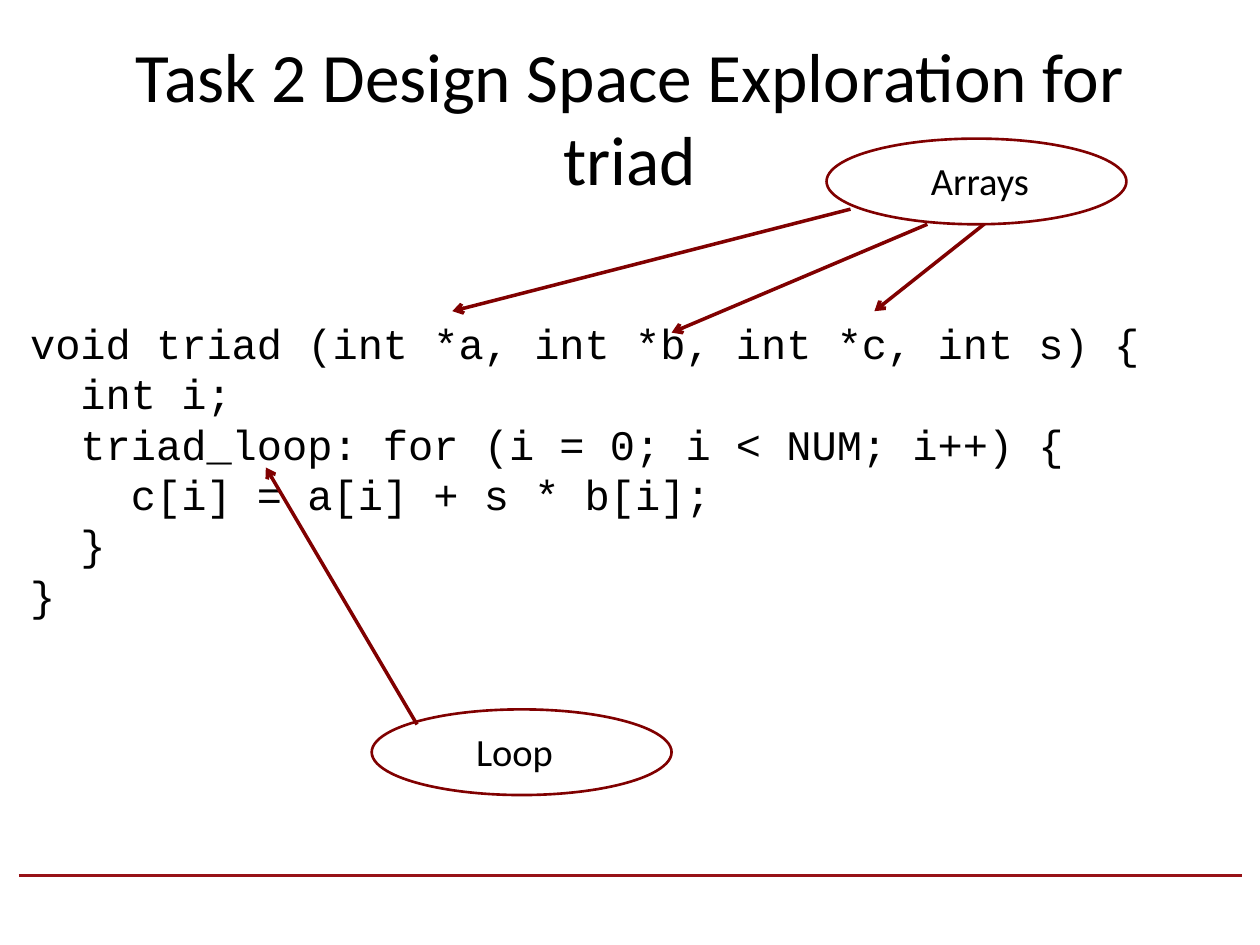
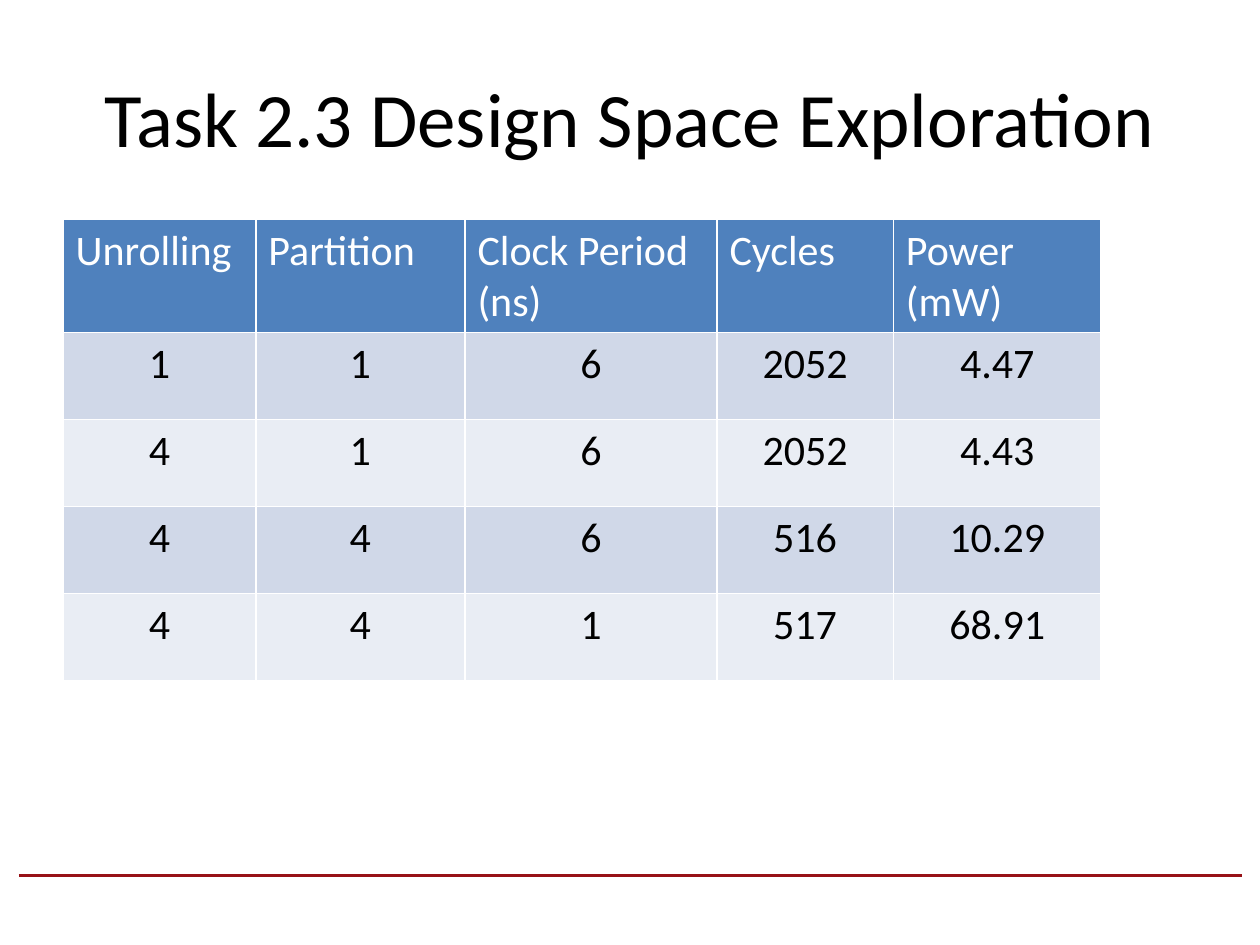
from lxml.etree import SubElement
from pptx import Presentation
from pptx.dml.color import RGBColor
from pptx.enum.shapes import MSO_CONNECTOR, MSO_SHAPE
from pptx.enum.text import MSO_ANCHOR, PP_ALIGN
from pptx.oxml.ns import qn
from pptx.util import Inches, Pt

BLACK = RGBColor(0x00, 0x00, 0x00)
WHITE = RGBColor(0xFF, 0xFF, 0xFF)
MAROON = RGBColor(0x80, 0x00, 0x00)
CRIMSON = RGBColor(0x97, 0x12, 0x17)
HEADER = RGBColor(0x4F, 0x81, 0xBD)
BANDS = (RGBColor(0xD0, 0xD8, 0xE8), RGBColor(0xE9, 0xED, 0xF4))

COLS, ROWS = 100, 75
UNIT = Inches(10) // COLS

TITLE = {"name": "Calibri", "size": Pt(44), "color": BLACK}
LABEL = {"name": "Calibri", "size": Pt(22), "color": BLACK}
CODE = {"name": "Courier New", "size": Pt(24), "color": BLACK}
HEAD = {"name": "Calibri", "size": Pt(24), "bold": False, "color": WHITE}
BODY = {**HEAD, "color": BLACK}

TRIAD = """void triad (int *a, int *b, int *c, int s) {
  int i;
  triad_loop: for (i = 0; i < NUM; i++) {
    c[i] = a[i] + s * b[i];
  }
}"""

RESULTS = [
    ("Unrolling", "Partition", "Clock Period (ns)", "Cycles", "Power (mW)"),
    ("1", "1", "6", "2052", "4.47"),
    ("4", "1", "6", "2052", "4.43"),
    ("4", "4", "6", "516", "10.29"),
    ("4", "4", "1", "517", "68.91"),
]
WIDTHS = (15.3, 16.6, 20, 14, 16.5)
HEIGHTS = (9,) + (6.9,) * 4


def grid(*cells):
    """Turn counts of grid cells into slide lengths."""
    return [round(cell * UNIT) for cell in cells]


def write(frame, text, style, align=PP_ALIGN.LEFT):
    """Fill a text frame, one paragraph for each line of text."""
    frame.text = text
    for para in frame.paragraphs:
        para.alignment = align
        for key, value in style.items():
            if key == "color":
                para.font.color.rgb = value
            else:
                setattr(para.font, key, value)


def add_text(slide, box, text, style, align=PP_ALIGN.LEFT,
             anchor=MSO_ANCHOR.TOP, wrap=True):
    frame = slide.shapes.add_textbox(*grid(*box)).text_frame
    frame.word_wrap = wrap
    frame.vertical_anchor = anchor
    write(frame, text, style, align)


def add_line(slide, start, end, color, arrow=False):
    line = slide.shapes.add_connector(
        MSO_CONNECTOR.STRAIGHT, *grid(*start, *end))
    line.line.color.rgb = color
    line.line.width = Pt(2)
    if arrow:
        SubElement(line.line._get_or_add_ln(), qn("a:tailEnd"), type="arrow")
    SubElement(line._element.spPr, qn("a:effectLst"))


def add_bubble(slide, left, top, text, width):
    """Draw an outlined ellipse with its label inside."""
    oval = slide.shapes.add_shape(
        MSO_SHAPE.OVAL, *grid(left, top, 23.8, 6.8))
    oval.shadow.inherit = False
    oval.fill.background()
    oval.line.color.rgb = MAROON
    oval.line.width = Pt(1.5)
    add_text(slide, (left + 7.3, top + 1, width, 4.7), text, LABEL, wrap=False)


def add_edges(cell):
    props = cell._tc.get_or_add_tcPr()
    for side in "LRTB":
        edge = SubElement(props, qn(f"a:ln{side}"), w=str(Pt(1)))
        fill = SubElement(edge, qn("a:solidFill"))
        SubElement(fill, qn("a:srgbClr"), val=str(WHITE))


def add_table(slide, left, top, data):
    box = grid(left, top, sum(WIDTHS), sum(HEIGHTS))
    table = slide.shapes.add_table(len(data), len(WIDTHS), *box).table
    for column, width in zip(table.columns, grid(*WIDTHS)):
        column.width = width
    for row, height in zip(table.rows, grid(*HEIGHTS)):
        row.height = height
    for r, values in enumerate(data):
        for c, value in enumerate(values):
            cell = table.cell(r, c)
            add_edges(cell)
            cell.fill.solid()
            cell.fill.fore_color.rgb = BANDS[(r - 1) % 2] if r else HEADER
            write(cell.text_frame, value, BODY if r else HEAD,
                  PP_ALIGN.CENTER if r else PP_ALIGN.LEFT)


def add_slide(deck, title, size=Pt(44)):
    """Start a slide with the shared footer rule and title."""
    slide = deck.slides.add_slide(deck.slide_layouts[6])
    add_line(slide, (1.5, 69.5), (98.6, 69.5), CRIMSON)
    add_text(slide, (5, 3, 90, 12.5), title, {**TITLE, "size": size},
             PP_ALIGN.CENTER, MSO_ANCHOR.MIDDLE)
    return slide


def add_triad(deck):
    slide = add_slide(
        deck, "Task 2 Design Space Exploration for triad", Pt(39.6))
    add_text(slide, (1.4, 24.7, 96.9, 26), TRIAD, CODE)
    arrows = [
        ((78.1, 17.8), (69.4, 24.7)),
        ((73.6, 17.8), (53.3, 26.4)),
        ((67.5, 16.6), (35.9, 24.7)),
        ((33.1, 57.5), (21.1, 37.1)),
    ]
    for start, end in arrows:
        add_line(slide, start, end, MAROON, arrow=True)
    add_bubble(slide, 65.6, 11, "Arrays", 10)
    add_bubble(slide, 29.5, 56.3, "Loop", 8.2)


def main():
    deck = Presentation()
    deck.slide_width, deck.slide_height = grid(COLS, ROWS)
    add_triad(deck)
    add_table(add_slide(deck, "Task 2.3 Design Space Exploration"),
              5, 17.4, RESULTS)
    deck.save("out.pptx")


if __name__ == "__main__":
    main()
